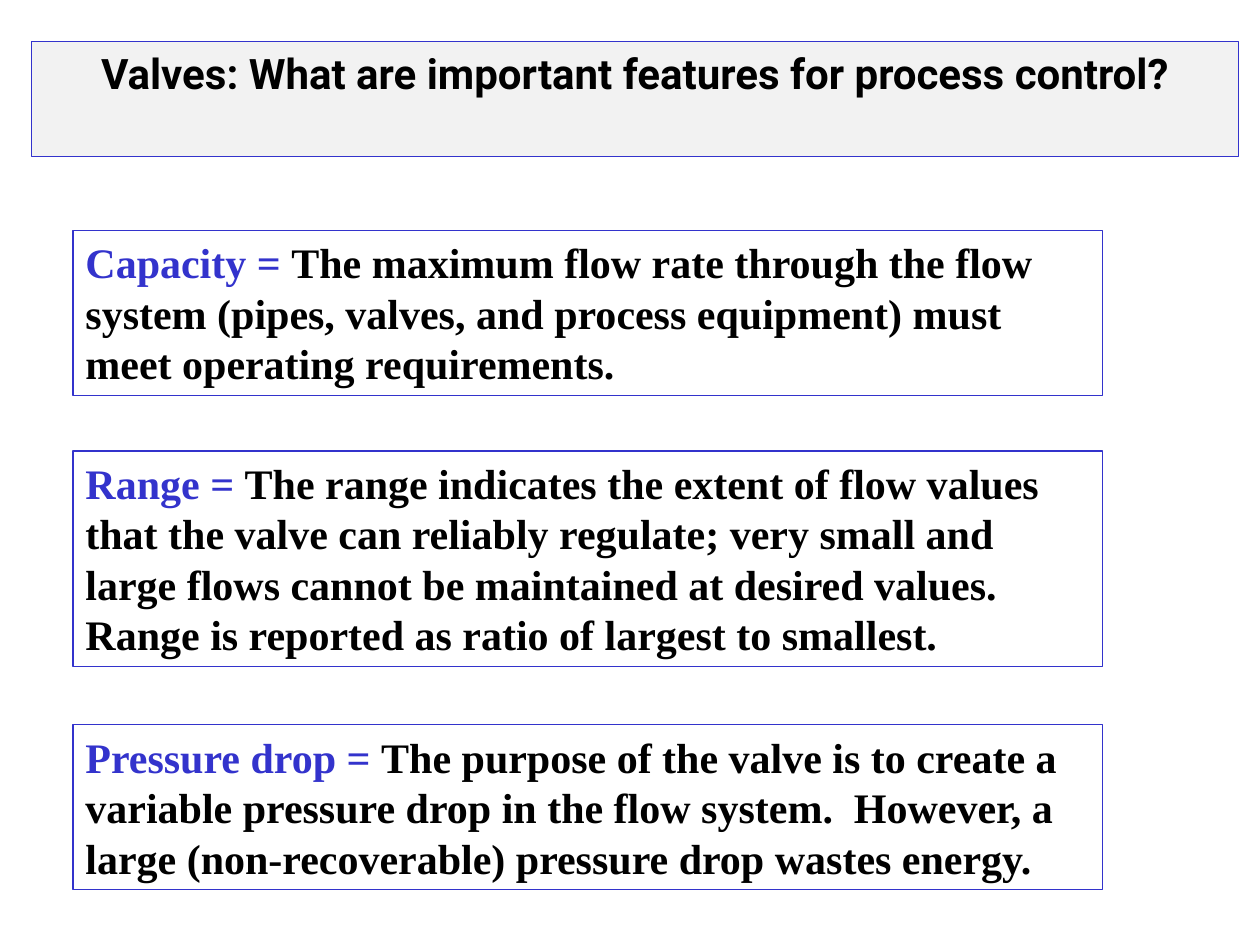
from pptx import Presentation
from pptx.dml.color import RGBColor
from pptx.enum.text import MSO_ANCHOR, MSO_AUTO_SIZE, PP_ALIGN
from pptx.util import Inches, Pt

TOP, MIDDLE = MSO_ANCHOR.TOP, MSO_ANCHOR.MIDDLE
LEFT, CENTER = PP_ALIGN.LEFT, PP_ALIGN.CENTER
GROW = MSO_AUTO_SIZE.SHAPE_TO_FIT_TEXT
TITLE_ONLY = 5

BLUE, BLACK, GREY = "3333CC", "000000", "F2F2F2"
TITLE_FONT, BODY_FONT = "Roboto", "Times New Roman"

TITLE = "Valves: What are important features for process control?"
TITLE_AREA = (0.25, 0.33, 9.58, 0.91)
FEATURE_LEFT, FEATURE_WIDTH = 0.58, 8.17
FEATURES = [
    ("Capacity", "The maximum flow rate through the flow system (pipes, valves, "
     "and process equipment) must meet operating requirements.", 1.83, 1.31, TOP),
    ("Range", "The range indicates the extent of flow values that the valve can "
     "reliably regulate; very small and large flows cannot be maintained at "
     "desired values.  Range is reported as ratio of largest to smallest.",
     3.58, 1.71, TOP),
    ("Pressure drop", "The purpose of the valve is to create a variable pressure "
     "drop in the flow system.  However, a large (non-recoverable) pressure drop "
     "wastes energy.", 5.75, 1.31, MIDDLE),
]


def color(hex_value):
    return RGBColor.from_string(hex_value)


def apply(target, values):
    for name, value in values.items():
        setattr(target, name, value)


def fill_box(box, area, runs, font, align, anchor):
    apply(box, dict(zip(("left", "top", "width", "height"), map(Inches, area))))
    box.line.color.rgb = color(BLUE)
    box.line.width = Pt(0.75)
    frame = box.text_frame
    apply(frame, {"word_wrap": True, "auto_size": GROW, "vertical_anchor": anchor,
                  "margin_left": Inches(0.1), "margin_right": Inches(0.1),
                  "margin_top": Inches(0.05), "margin_bottom": Inches(0.05)})
    paragraph = frame.paragraphs[0]
    apply(paragraph, {"alignment": align, "line_spacing": 1.0,
                      "space_before": Pt(12)})
    for text, hex_value in runs:
        run = paragraph.add_run()
        run.text = text
        apply(run.font, {"name": font, "size": Pt(24), "bold": True})
        run.font.color.rgb = color(hex_value)


def main():
    """Build the slide on valve features for process control."""
    deck = Presentation()
    apply(deck, {"slide_width": Inches(10), "slide_height": Inches(7.5)})
    slide = deck.slides.add_slide(deck.slide_layouts[TITLE_ONLY])

    title = slide.shapes.title
    title.fill.solid()
    title.fill.fore_color.rgb = color(GREY)
    fill_box(title, TITLE_AREA, [(TITLE, BLACK)], TITLE_FONT, CENTER, TOP)

    for term, meaning, top, height, anchor in FEATURES:
        area = (FEATURE_LEFT, top, FEATURE_WIDTH, height)
        feature = slide.shapes.add_textbox(*map(Inches, area))
        fill_box(feature, area, [(f"{term} = ", BLUE), (meaning, BLACK)],
                 BODY_FONT, LEFT, anchor)

    deck.save("out.pptx")


if __name__ == "__main__":
    main()
